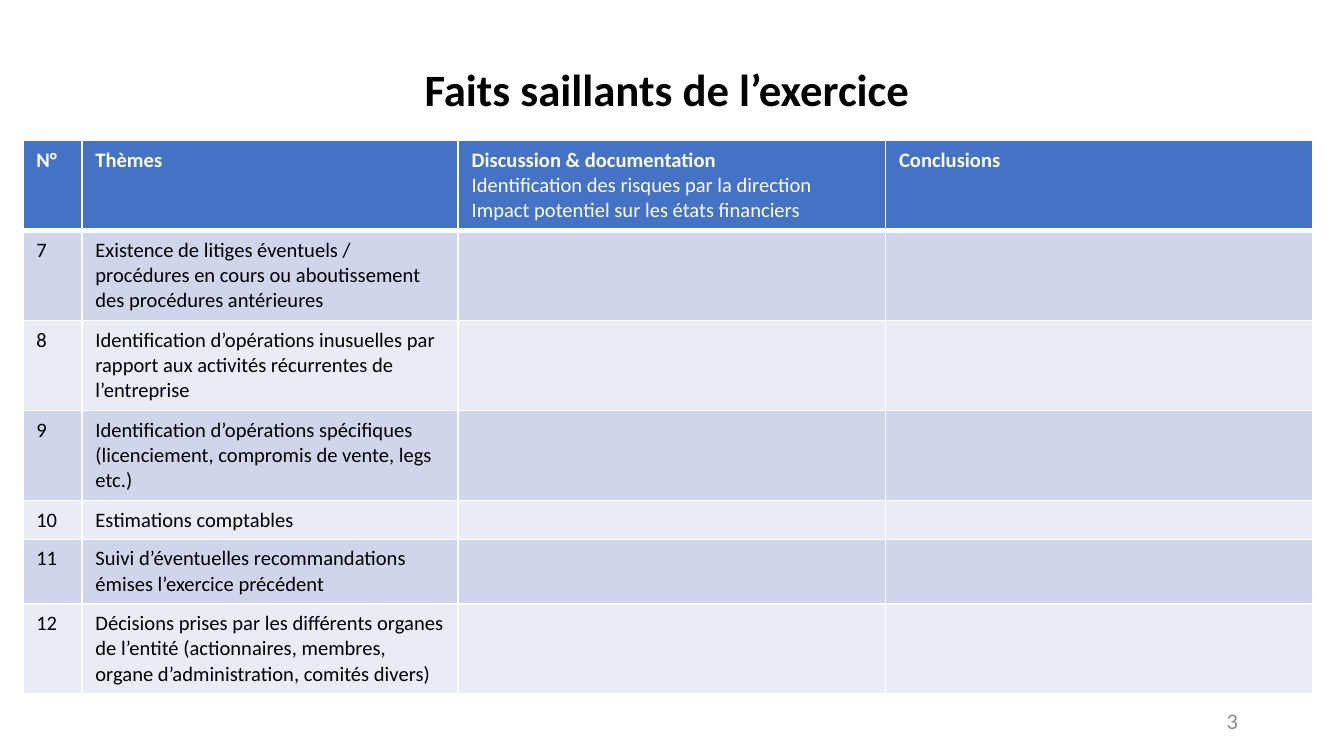
from typing import NamedTuple

from lxml.etree import SubElement
from pptx import Presentation
from pptx.dml.color import RGBColor
from pptx.enum.text import MSO_ANCHOR as Anchor, PP_ALIGN as Align
from pptx.oxml.ns import qn
from pptx.util import Inches, Pt

WIDTH = Inches(10)
HEIGHT = WIDTH * 9 // 16
FONT = "Calibri"
BODY_SIZE = 11
BLACK, WHITE, GREY = "000000", "FFFFFF", "8C8C8C"
HEADER_FILL = "4472C4"
BAND_FILLS = ("CFD5EA", "E9EBF5")
COLUMN_WIDTHS = (0.44, 2.8, 3.18, 3.18)
LINE_HEIGHT, ROW_PADDING = 0.19, 0.1


class Box(NamedTuple):
    """Position and size in percent of the slide."""
    left: float
    top: float
    width: float
    height: float

    def lengths(self) -> tuple[int, ...]:
        return tuple(int(share * whole / 100)
                     for share, whole in zip(self, (WIDTH, HEIGHT) * 2))


class Theme(NamedTuple):
    number: int
    wording: str
    lines: int


HEADINGS = (
    ("N°",),
    ("Thèmes",),
    ("Discussion & documentation",
     "Identification des risques par la direction",
     "Impact potentiel sur les états financiers"),
    ("Conclusions",),
)
THEMES = (
    Theme(7, "Existence de litiges éventuels / procédures en cours ou "
             "aboutissement des procédures antérieures", 3),
    Theme(8, "Identification d’opérations inusuelles par rapport aux "
             "activités récurrentes de l’entreprise", 3),
    Theme(9, "Identification d’opérations spécifiques (licenciement, "
             "compromis de vente, legs etc.)", 3),
    Theme(10, "Estimations comptables", 1),
    Theme(11, "Suivi d’éventuelles recommandations émises l’exercice précédent", 2),
    Theme(12, "Décisions prises par les différents organes de l’entité "
              "(actionnaires, membres, organe d’administration, comités divers)", 3),
)


def rgb(color: str) -> RGBColor:
    return RGBColor.from_string(color)


def style(paragraph, size: float, color: str, bold: bool = False) -> None:
    font = paragraph.font
    font.name, font.size, font.bold = FONT, Pt(size), bold
    font.color.rgb = rgb(color)


def add_label(slide, box: Box, wording: str, size: float, color: str,
              align: Align, bold: bool = False) -> None:
    frame = slide.shapes.add_textbox(*box.lengths()).text_frame
    frame.word_wrap = True
    frame.vertical_anchor = Anchor.MIDDLE
    paragraph = frame.paragraphs[0]
    paragraph.text = wording
    paragraph.alignment = align
    style(paragraph, size, color, bold)
    if bold:
        paragraph.line_spacing = 0.9


def add_borders(cell, top: float = 1, bottom: float = 1) -> None:
    """Draw white borders; call before the fill, which must follow them in the XML."""
    properties = cell._tc.get_or_add_tcPr()
    for side, points in (("L", 1), ("R", 1), ("T", top), ("B", bottom)):
        line = SubElement(properties, qn(f"a:ln{side}"), w=str(Pt(points)))
        SubElement(SubElement(line, qn("a:solidFill")), qn("a:srgbClr"), val=WHITE)


def fill_cell(cell, wordings: tuple[str, ...], fill: str, color: str,
              bold_first: bool = False) -> None:
    cell.fill.solid()
    cell.fill.fore_color.rgb = rgb(fill)
    frame = cell.text_frame
    for index, wording in enumerate(wordings):
        paragraph = frame.add_paragraph() if index else frame.paragraphs[0]
        style(paragraph, BODY_SIZE, color, bold_first and index == 0)
        if wording:
            paragraph.text = wording
        else:  # keeps an empty cell from stretching its row
            SubElement(paragraph._p, qn("a:endParaRPr"), sz=str(BODY_SIZE * 100))


def add_themes_table(slide, box: Box) -> None:
    table = slide.shapes.add_table(
        len(THEMES) + 1, len(HEADINGS), *box.lengths()).table
    for column, width in zip(table.columns, COLUMN_WIDTHS):
        column.width = Inches(width)
    line_counts = [max(map(len, HEADINGS)), *(theme.lines for theme in THEMES)]
    for row, lines in zip(table.rows, line_counts):
        row.height = Inches(lines * LINE_HEIGHT + ROW_PADDING)

    for column, heading in enumerate(HEADINGS):
        cell = table.cell(0, column)
        add_borders(cell, bottom=3)
        fill_cell(cell, heading, HEADER_FILL, WHITE, bold_first=True)
    for row, theme in enumerate(THEMES, start=1):
        band = BAND_FILLS[(row - 1) % 2]
        for column, wording in enumerate((str(theme.number), theme.wording, "", "")):
            cell = table.cell(row, column)
            add_borders(cell, top=3 if row == 1 else 1)
            fill_cell(cell, (wording,), band, BLACK)


def main() -> None:
    deck = Presentation()
    deck.slide_width, deck.slide_height = WIDTH, HEIGHT
    slide = deck.slides.add_slide(deck.slide_layouts[6])
    add_label(slide, Box(70.6, 92.7, 22.5, 5.3), "3", 12, GREY, Align.RIGHT)
    add_themes_table(slide, Box(1.7, 18.6, 96, 71.5))
    add_label(slide, Box(6.9, 2.5, 86.2, 19.4), "Faits saillants de l’exercice ",
              24, BLACK, Align.CENTER, bold=True)
    deck.save("out.pptx")


if __name__ == "__main__":
    main()
